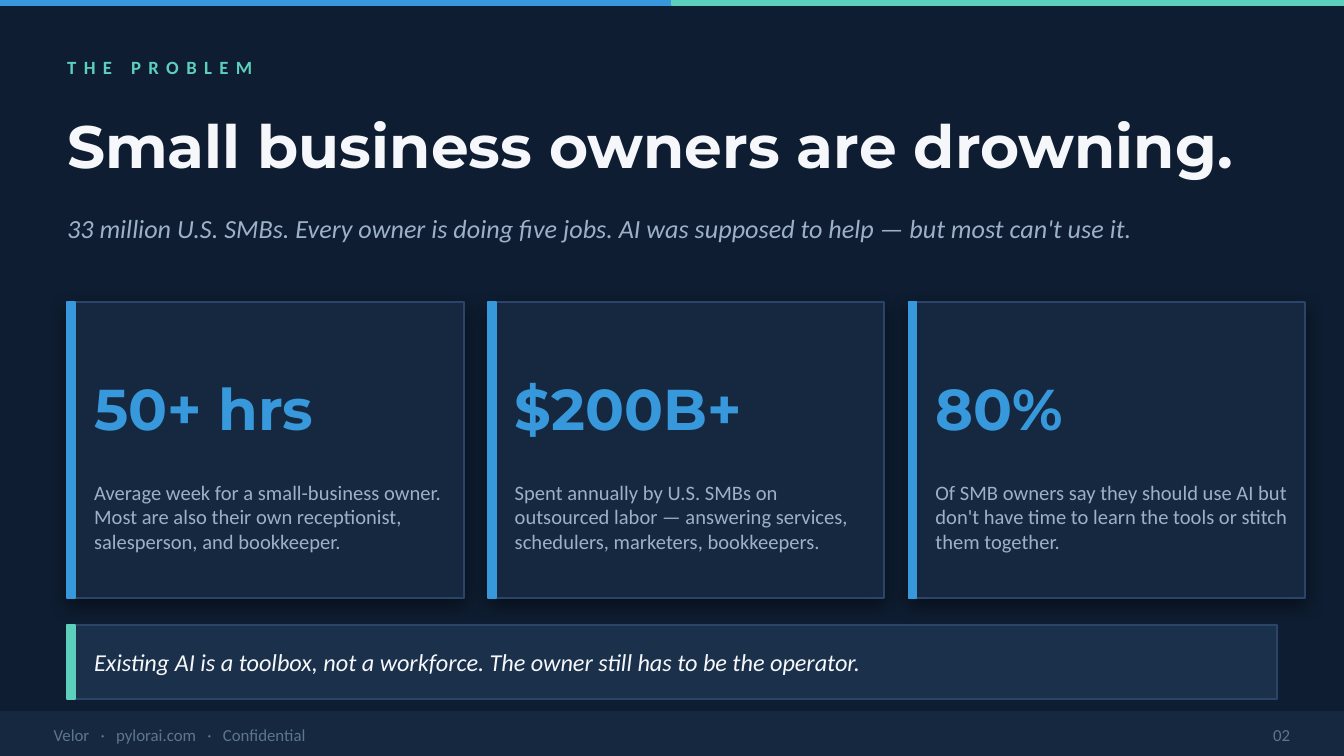
from lxml import etree
from pptx import Presentation
from pptx.dml.color import RGBColor
from pptx.enum.shapes import MSO_SHAPE
from pptx.enum.text import MSO_ANCHOR, MSO_AUTO_SIZE, PP_ALIGN
from pptx.oxml.ns import qn
from pptx.util import Emu, Pt

RECT = MSO_SHAPE.RECTANGLE
TOP, MIDDLE = MSO_ANCHOR.TOP, MSO_ANCHOR.MIDDLE
LEFT, RIGHT = PP_ALIGN.LEFT, PP_ALIGN.RIGHT
NO_FIT = MSO_AUTO_SIZE.NONE

PX = 4572
HEAD, BODY = "Montserrat", "Calibri"
NAVY, PANEL, BANNER, BORDER = "0E1D31", "152840", "1B304A", "2A4569"
BLUE, TEAL, WHITE, MUTED, DIM = "3798DC", "5DD0BD", "F5F7FA", "9DB1C6", "5E768D"

STATS = [
    ("50+ hrs", "Average week for a small-business owner. Most are also "
                "their own receptionist, salesperson, and bookkeeper."),
    ("$200B+", "Spent annually by U.S. SMBs on outsourced labor — answering "
               "services, schedulers, marketers, bookkeepers."),
    ("80%", "Of SMB owners say they should use AI but don't have time to "
            "learn the tools or stitch them together."),
]


def px(n):
    return Emu(n * PX)


def color(value):
    return RGBColor.from_string(value)


def add_run(p, text, size=11, font=BODY, fill=MUTED, bold=False,
            italic=False, spacing=0):
    r = p.add_run()
    r.text = text
    r.font.size, r.font.name = Pt(size), font
    r.font.bold, r.font.italic = bold, italic
    r.font.color.rgb = color(fill)
    if spacing:
        r.font._element.set("spc", str(spacing * 100))


def format_frame(tf, anchor=MIDDLE, align=LEFT):
    tf.word_wrap, tf.auto_size = True, NO_FIT
    tf.vertical_anchor = anchor
    tf.margin_left = tf.margin_right = tf.margin_top = tf.margin_bottom = 0
    p = tf.paragraphs[0]
    p.alignment = align
    return p


def add_box(s, x, y, w, h, anchor=MIDDLE, align=LEFT):
    box = s.shapes.add_textbox(px(x), px(y), px(w), px(h))
    return format_frame(box.text_frame, anchor, align)


def add_text(s, text, x, y, w, h, anchor=MIDDLE, align=LEFT, **style):
    add_run(add_box(s, x, y, w, h, anchor, align), text, **style)


def add_title(s, text, x, y, w, h, **style):
    sp = s.shapes.title
    sp.left, sp.top, sp.width, sp.height = px(x), px(y), px(w), px(h)
    add_run(format_frame(sp.text_frame), text, **style)


def add_rect(s, x, y, w, h, fill, line=None):
    sp = s.shapes.add_shape(RECT, px(x), px(y), px(w), px(h))
    sp.shadow.inherit = False
    sp.fill.solid()
    sp.fill.fore_color.rgb = color(fill)
    sp.line.color.rgb = color(line or fill)
    sp.line.width = Pt(1)
    return sp


def add_shadow(sp):
    effects = sp._element.spPr.find(qn("a:effectLst"))
    shadow = etree.SubElement(effects, qn("a:outerShdw"), blurRad="127000",
                              dist="38100", dir="5400000", rotWithShape="0")
    black = etree.SubElement(shadow, qn("a:srgbClr"), val="000000")
    etree.SubElement(black, qn("a:alpha"), val="45000")


def add_panel(s, x, y, w, h, fill, accent):
    panel = add_rect(s, x, y, w, h, fill, BORDER)
    add_rect(s, x, y, 12, h, accent)
    return panel


def add_stat(s, x, y, value, note):
    add_shadow(add_panel(s, x, y, 590, 440, PANEL, BLUE))
    add_text(s, value, x + 40, y + 36, 530, 242,
             size=30.8, font=HEAD, fill=BLUE, bold=True)
    add_text(s, note, x + 40, y + 264, 530, 154, anchor=TOP)


def add_footer(s, items, number):
    add_rect(s, 0, 1060, 2000, 64, PANEL)
    p = add_box(s, 80, 1066, 1200, 56)
    for i, item in enumerate(items):
        if i:
            for mark, spacing in ((" ", 4), ("·", 0), (" ", 4)):
                add_run(p, mark, size=9, fill=DIM, spacing=spacing)
        add_run(p, item, size=9, fill=DIM)
    add_text(s, number, 1800, 1066, 120, 56, align=RIGHT, size=9, fill=DIM)


def main():
    prs = Presentation()
    prs.slide_width, prs.slide_height = px(2000), px(1125)
    s = prs.slides.add_slide(prs.slide_layouts[5])
    s.background.fill.solid()
    s.background.fill.fore_color.rgb = color(NAVY)

    for i, fill in enumerate((BLUE, TEAL)):
        add_rect(s, 1000 * i, 0, 1000, 8, fill)
    add_footer(s, ("Velor", "pylorai.com", "Confidential"), "02")

    add_text(s, "THE PROBLEM", 100, 70, 1200, 60,
             size=10, fill=TEAL, bold=True, spacing=4)
    add_title(s, "Small business owners are drowning.", 100, 130, 1800, 170,
              size=32, font=HEAD, fill=WHITE, bold=True)
    add_text(s, "33 million U.S. SMBs. Every owner is doing five jobs. "
                "AI was supposed to help — but most can't use it.",
             100, 300, 1800, 80, size=14, italic=True)

    for i, (value, note) in enumerate(STATS):
        add_stat(s, 100 + 626 * i, 450, value, note)

    add_panel(s, 100, 930, 1800, 110, BANNER, TEAL)
    add_text(s, "Existing AI is a toolbox, not a workforce. "
                "The owner still has to be the operator.",
             140, 930, 1740, 110, size=13, fill=WHITE, italic=True)
    prs.save("out.pptx")


if __name__ == "__main__":
    main()
